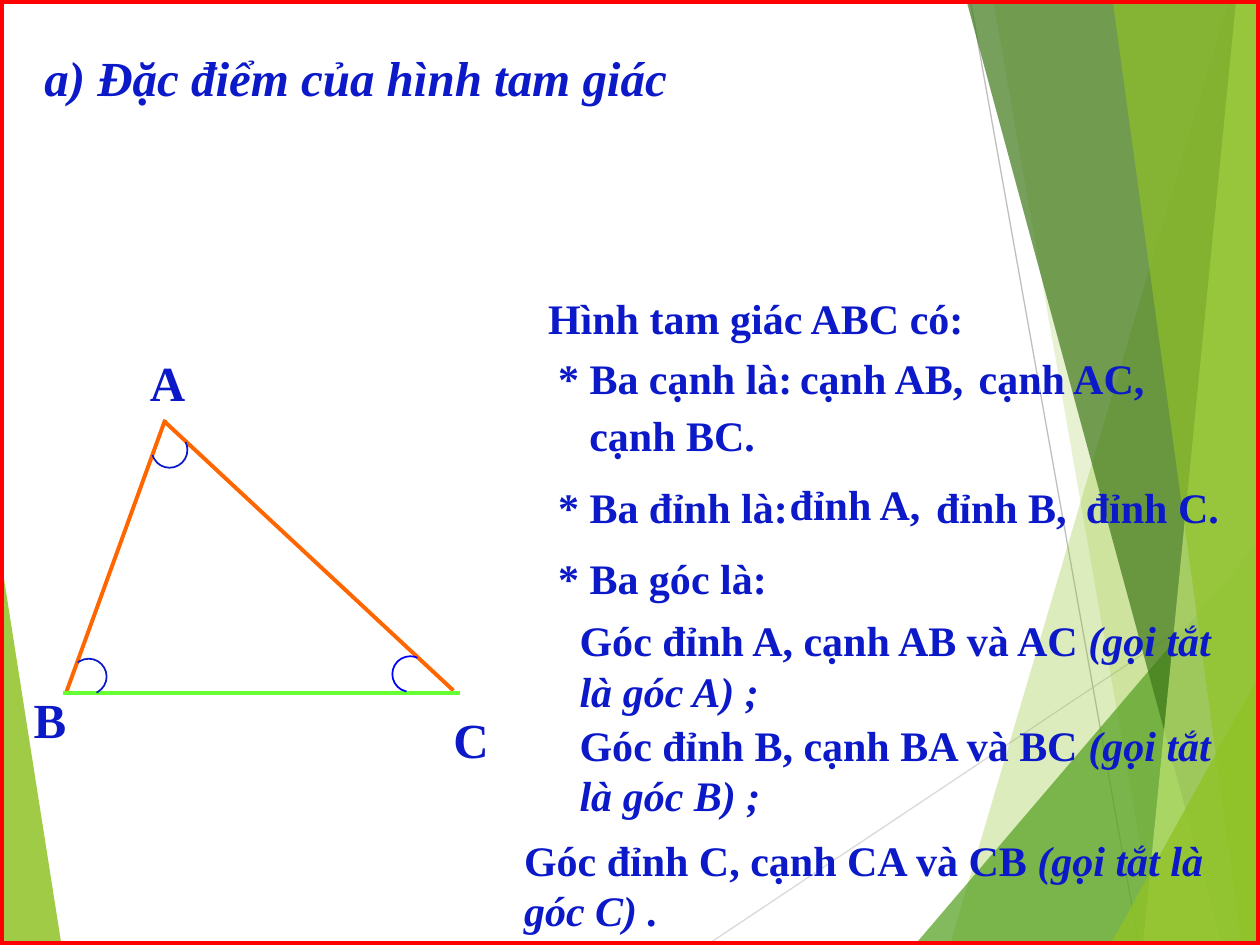
from dataclasses import dataclass

from lxml import etree
from pptx import Presentation
from pptx import util as u
from pptx.dml.color import RGBColor
from pptx.enum import shapes, text
from pptx.oxml.ns import qn

WIDTH, HEIGHT = 25.4, 19.05


@dataclass(frozen=True)
class Theme:
    font: str = "Times New Roman"
    ink: str = "0B19C8"
    side: str = "FF6600"
    base: str = "66FF33"
    frame: str = "FF0000"
    white: str = "FFFFFF"
    blue: str = "0000FF"
    lime: str = "90C226"
    green: str = "54A021"
    forest: str = "3F7819"
    pale: str = "C0E474"
    grays: tuple = ("D9D9D9", "BFBFBF")
    large: int = 28
    normal: int = 24
    spacing: float = 1.0


class SlideBuilder:
    def __init__(self, slide, theme):
        self.slide, self.theme = slide, theme

    def polygon(self, points, color, opacity):
        corners = [(u.Cm(x), u.Cm(y)) for x, y in points]
        builder = self.slide.shapes.build_freeform(*corners[0], scale=1.0)
        builder.add_line_segments(corners[1:], close=True)
        shape = builder.convert_to_shape()
        shape.shadow.inherit = False
        shape.fill.solid()
        shape.fill.fore_color.rgb = RGBColor.from_string(color)
        shape.line.fill.background()
        fill = shape.element.spPr.find(qn("a:solidFill"))
        etree.SubElement(fill[0], qn("a:alpha"), val=str(opacity * 1000))

    def band(self, top, bottom, color, opacity):
        """A slanted edge that fills out to the right of the slide."""
        self.polygon([(top, 0), (bottom, HEIGHT), (WIDTH, HEIGHT), (WIDTH, 0)],
                     color, opacity)

    def wedge(self, bottom, right, color, opacity):
        """A triangle in the lower right corner."""
        self.polygon([(bottom, HEIGHT), (WIDTH, right), (WIDTH, HEIGHT)],
                     color, opacity)

    def line(self, start, end, color, weight):
        ends = [u.Cm(value) for value in (*start, *end)]
        line = self.slide.shapes.add_connector(
            shapes.MSO_CONNECTOR.STRAIGHT, *ends)
        line.line.color.rgb = RGBColor.from_string(color)
        line.line.width = u.Pt(weight)
        etree.SubElement(line.element.spPr, qn("a:effectLst"))

    def outline(self, kind, place, color, weight, adjustments=()):
        shape = self.slide.shapes.add_shape(kind, *map(u.Cm, place))
        shape.shadow.inherit = False
        shape.fill.background()
        shape.line.color.rgb = RGBColor.from_string(color)
        shape.line.width = u.Pt(weight)
        for index, value in enumerate(adjustments):
            shape.adjustments[index] = value

    def angle(self, center, start, end, color, radius=0.36):
        x, y = center
        # Arc angles are stored in 60000ths, adjustments in 100000ths
        self.outline(shapes.MSO_SHAPE.ARC,
                     (x - radius, y - radius, 2 * radius, 2 * radius),
                     color, 1, (start * 0.6, end * 0.6))

    def style(self, para, size, italic=False):
        para.alignment = text.PP_ALIGN.LEFT
        para.line_spacing = self.theme.spacing
        para.space_before = u.Pt(0)
        for span in para.runs:
            span.font.name = self.theme.font
            span.font.size = u.Pt(size)
            span.font.bold = True
            span.font.italic = italic
            span.font.color.rgb = RGBColor.from_string(self.theme.ink)

    def label(self, words, left, top, width, size=None):
        box = self.slide.shapes.add_textbox(
            u.Cm(left), u.Cm(top), u.Cm(width), u.Cm(1.27))
        box.text_frame.word_wrap = True
        box.text_frame.text = words
        self.style(box.text_frame.paragraphs[0], size or self.theme.normal)

    def place(self, holder, left, top, width, height):
        holder.left, holder.top = u.Cm(left), u.Cm(top)
        holder.width, holder.height = u.Cm(width), u.Cm(height)
        holder.text_frame.auto_size = text.MSO_AUTO_SIZE.NONE
        holder.text_frame.vertical_anchor = text.MSO_ANCHOR.TOP
        self.slide.shapes.element.append(holder.element)  # bring to front

    def title(self, words, *place):
        holder = self.slide.shapes.title
        self.place(holder, *place)
        holder.text_frame.text = words
        self.style(holder.text_frame.paragraphs[0], self.theme.large, True)

    def body(self, items, *place):
        holder = self.slide.placeholders[1]
        self.place(holder, *place)
        frame = holder.text_frame
        frame.text = "\n".join(plain for plain, *_ in items)
        for para, (_, note, indent, gap) in zip(frame.paragraphs, items):
            span = para.add_run()
            span.text = note
            self.style(para, self.theme.normal)
            span.font.italic = True
            para.space_before = u.Pt(gap)
            props = para._p.get_or_add_pPr()
            props.set("marL", str(u.Cm(indent)))
            props.set("indent", "0")
            etree.SubElement(props, qn("a:buNone"))


def main():
    deck = Presentation()
    deck.slide_width, deck.slide_height = u.Cm(WIDTH), u.Cm(HEIGHT)
    theme = Theme()
    page = SlideBuilder(deck.slides.add_slide(deck.slide_layouts[1]), theme)

    # Green facets behind everything
    page.polygon([(0, 11.15), (1.24, HEIGHT), (0, HEIGHT)], theme.lime, 85)
    page.line((14.25, HEIGHT), (WIDTH, 11.61), theme.grays[0], 0.75)
    page.line((19.56, 0), (22.96, HEIGHT), theme.grays[1], 0.75)
    page.band(24.77, 19.15, theme.lime, 30)
    page.band(20.02, 23.34, theme.lime, 20)
    page.wedge(18.44, 10.9, theme.green, 72)
    page.band(19.48, 24.64, theme.forest, 70)
    page.band(24.92, 23.04, theme.pale, 70)
    page.band(22.43, 25.04, theme.lime, 65)
    page.wedge(22.38, 13.59, theme.lime, 80)

    # Triangle ABC with its sides, angles and corner names
    page.outline(shapes.MSO_SHAPE.ISOSCELES_TRIANGLE,
                 (1.32, 8.46, 7.92, 5.51), theme.white, 2, (0.25,))
    page.line((3.33, 8.46), (1.32, 14), theme.side, 2.25)
    page.line((3.33, 8.51), (9.14, 13.92), theme.side, 2.25)
    page.line((1.27, 13.97), (9.27, 13.97), theme.base, 2.25)
    page.angle((3.42, 9.07), 334, 163, theme.ink)
    page.angle((1.79, 13.64), 232, 64, theme.ink)
    page.angle((8.27, 13.59), 102, 294, theme.blue)
    for name, left, top in (("A", 2.77, 6.99), ("B", 0.43, 13.77),
                            ("C", 8.89, 14.17)):
        page.label(name, left, top, 1.8, theme.large)

    # Sides, corners and angles in words
    for words, left, top, width in (
            ("Hình tam giác ABC có:", 10.8, 5.77, 10.16),
            ("* Ba cạnh là:", 11, 6.99, 5.72),
            ("cạnh AB,", 15.88, 6.99, 4.19),
            ("cạnh AC,", 19.48, 6.99, 4.19),
            ("cạnh BC.", 11.63, 8.13, 4.19),
            ("* Ba đỉnh là:", 11, 9.58, 5.72),
            ("đỉnh A,", 15.67, 9.53, 3.33),
            ("đỉnh B,", 18.62, 9.58, 3.33),
            ("đỉnh C.", 21.64, 9.58, 3.33),
            ("* Ba góc là:", 11, 11.02, 5.72)):
        page.label(words, left, top, width)
    page.body([("Góc đỉnh A, cạnh AB và AC ", "(gọi tắt là góc A) ;", 1.12, 0),
               ("Góc đỉnh B, cạnh BA và BC ", "(gọi tắt là góc B) ;", 1.12, 2),
               ("Góc đỉnh C, cạnh CA và CB ", "(gọi tắt là góc C) .", 0, 8)],
              10.31, 12.27, 15.09, 6.75)
    page.title("a) Đặc điểm của hình tam giác", 0.64, 0.84, 16.71, 1.45)

    # Slide frame
    page.outline(shapes.MSO_SHAPE.RECTANGLE, (0, 0, WIDTH, HEIGHT),
                 theme.frame, 4.5)
    deck.save("out.pptx")


if __name__ == "__main__":
    main()
